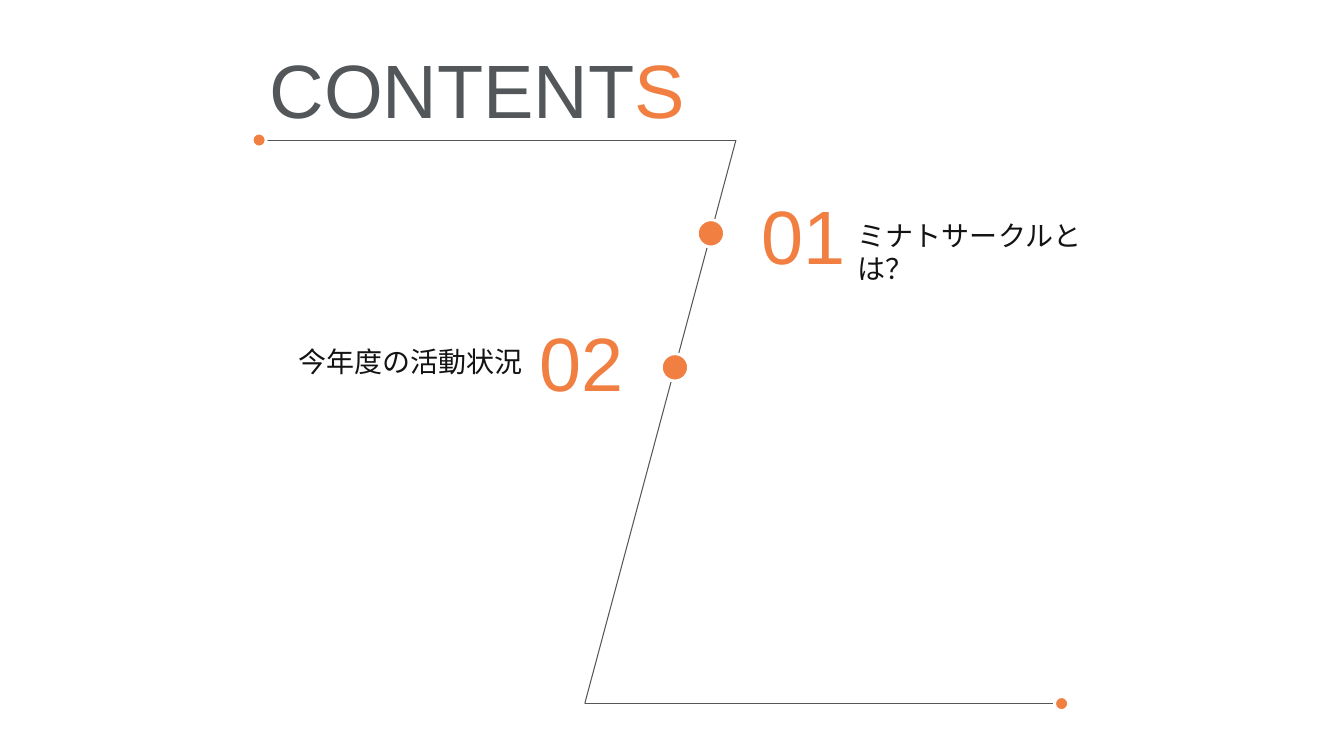
from lxml.etree import SubElement
from pptx import Presentation
from pptx.dml.color import RGBColor
from pptx.enum.shapes import MSO_CONNECTOR, MSO_SHAPE
from pptx.enum.text import MSO_AUTO_SIZE, PP_ALIGN
from pptx.oxml.ns import qn
from pptx.util import Inches, Pt

WIDTH, HEIGHT = Inches(13.33), Inches(7.5)
ORANGE, GREY, BLACK, WHITE = "F17F42", "53575A", "131313", "FFFFFF"
LATIN, JP, SC = "Arial", "Noto Sans CJK JP", "Noto Sans CJK SC"

# Corners of the Z-shaped line, in percent of the slide's width and height
TOP_RIGHT, BOTTOM_LEFT = (54.76, 18.53), (43.51, 93.07)
ARM = 35.48
SMALL_DOT, LARGE_DOT = Inches(0.14), Inches(0.27)
NUMBER_SIZE = (8.85, 13.47)
LABEL_DROP, LABEL_HEIGHT = 3.8, 5.87


def px(share):
    """Percent of the slide's width as a length."""
    return round(WIDTH * share / 100)


def py(share):
    """Percent of the slide's height as a length."""
    return round(HEIGHT * share / 100)


def rgb(color):
    return RGBColor.from_string(color)


def add_line(s, start, end):
    line = s.shapes.add_connector(MSO_CONNECTOR.STRAIGHT, px(start[0]), py(start[1]),
                                  px(end[0]), py(end[1]))
    line.line.color.rgb = rgb(GREY)
    line.line.width = Pt(0.75)
    SubElement(line._element.spPr, qn("a:effectLst"))


def add_dot(s, center, size):
    dot = s.shapes.add_shape(MSO_SHAPE.OVAL, px(center[0]) - size // 2,
                             py(center[1]) - size // 2, size, size)
    dot.shadow.inherit = False
    dot.fill.solid()
    dot.fill.fore_color.rgb = rgb(ORANGE)
    dot.line.color.rgb = rgb(WHITE)
    dot.line.width = Pt(2)


def add_text(s, box, runs, size=20, align=PP_ALIGN.LEFT, wrap=True):
    """Add one paragraph; runs are (text, font, color)."""
    x, y, w, h = box
    tf = s.shapes.add_textbox(px(x), py(y), px(w), py(h)).text_frame
    tf.word_wrap = wrap
    tf.auto_size = MSO_AUTO_SIZE.SHAPE_TO_FIT_TEXT
    p = tf.paragraphs[0]
    p.alignment = align
    for text, font, color in runs:
        r = p.add_run()
        r.text = text
        r.font.size = Pt(size)
        r.font.name = font
        r.font.color.rgb = rgb(color)
        SubElement(r.font._element, qn("a:ea")).set("typeface", font)


def point_on_diagonal(y):
    (x1, y1), (x2, y2) = TOP_RIGHT, BOTTOM_LEFT
    return x1 + (x2 - x1) * (y - y1) / (y2 - y1), y


def add_entry(s, number, number_at, dot_y, label_x, label_width, label, **fmt):
    """Add a dot on the diagonal with its number and label."""
    add_dot(s, point_on_diagonal(dot_y), LARGE_DOT)
    add_text(s, (*number_at, *NUMBER_SIZE), [(number, LATIN, ORANGE)], size=54)
    label_box = (label_x, number_at[1] + LABEL_DROP, label_width, LABEL_HEIGHT)
    add_text(s, label_box, label, **fmt)


def main():
    prs = Presentation()
    prs.slide_width, prs.slide_height = WIDTH, HEIGHT
    s = prs.slides.add_slide(prs.slide_layouts[6])

    top_left = (TOP_RIGHT[0] - ARM, TOP_RIGHT[1])
    bottom_right = (BOTTOM_LEFT[0] + ARM, BOTTOM_LEFT[1])
    corners = [top_left, TOP_RIGHT, BOTTOM_LEFT, bottom_right]
    for start, end in zip(corners, corners[1:]):
        add_line(s, start, end)
    for end in (top_left, bottom_right):
        add_dot(s, end, SMALL_DOT)

    add_text(s, (19.13, 5.07, 32.78, 13.47),
             [("CONTENT", LATIN, GREY), ("S", LATIN, ORANGE)],
             size=54, align=PP_ALIGN.CENTER, wrap=False)
    add_entry(s, "01", (55.89, 24.4), 30.87, 63.09, 19.8,
              [("ミナトサークル", JP, BLACK), ("とは？", SC, BLACK)])
    add_entry(s, "02", (39.38, 41.07), 48.6, 21.38, 18.38,
              [("今年度の活動状況", JP, BLACK)], align=PP_ALIGN.CENTER, wrap=False)

    prs.save("out.pptx")


if __name__ == "__main__":
    main()
